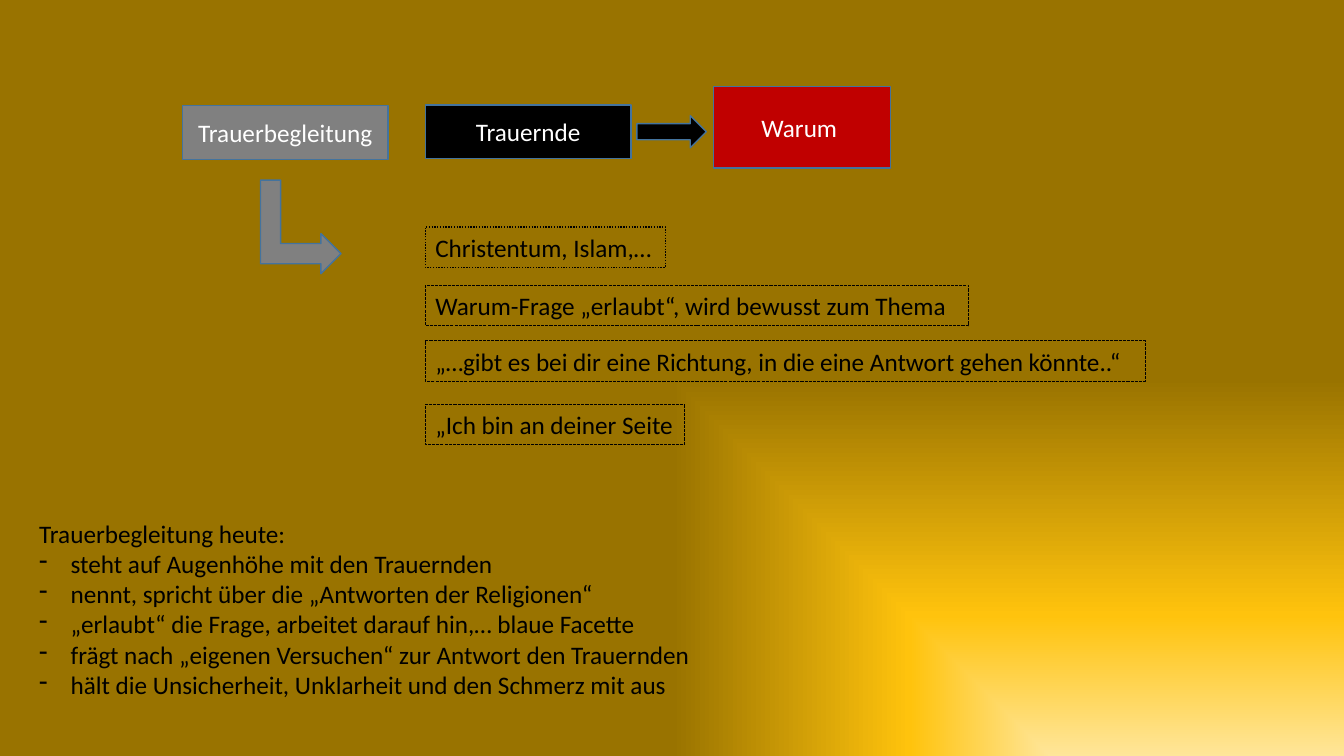
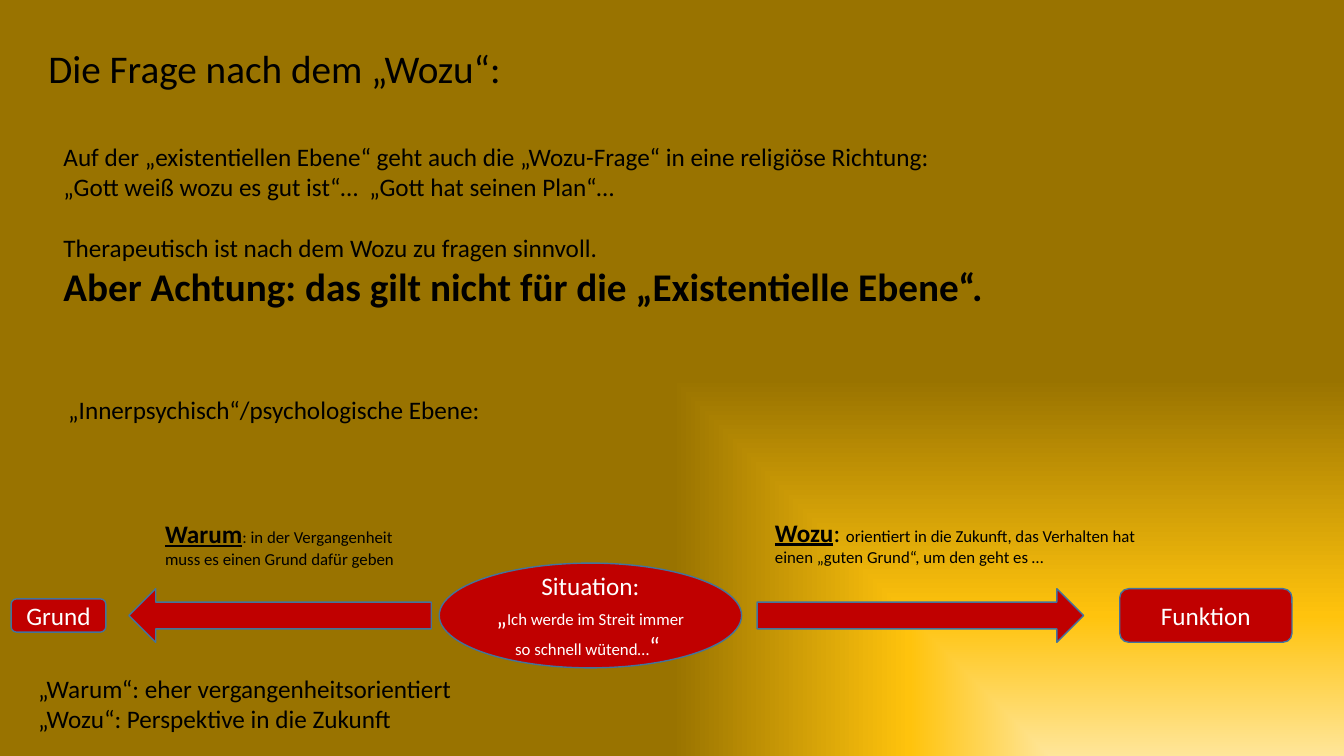
import pptx
import pptx.util
import pptx.dml.color
import pptx.enum.dml
import pptx.enum.shapes
import pptx.enum.text
import pptx.oxml
import pptx.oxml.ns

Cm, Pt = pptx.util.Cm, pptx.util.Pt
SHAPE = pptx.enum.shapes.MSO_SHAPE
DASH = pptx.enum.dml.MSO_LINE
ALIGN = pptx.enum.text.PP_ALIGN
AUTO = pptx.enum.text.MSO_AUTO_SIZE
MIDDLE = pptx.enum.text.MSO_ANCHOR.MIDDLE


class Theme:
    font = "Calibri"
    black, white, gray, red, edge = "000000", "FFFFFF", "808080", "C00000", "43739E"
    glow = [(0, "FFE699"), (37, "FFC30D"), (100, "997300")]
    runs = {
        "body": {"size": Pt(18)},
        "big": {"size": Pt(28)},
        "loud": {"size": Pt(28), "bold": True},
        "key": {"size": Pt(18), "bold": True, "underline": True},
        "small": {"size": Pt(12)},
    }
    paras = {
        "plain": {},
        "center": {"alignment": ALIGN.CENTER},
        "gap": {"space_before": Pt(22)},
        "dash": {},
    }
    indent = Cm(0.79)


# Content: a paragraph is a string or (paragraph style, [(text, run style), ...])
def dash(text):
    return ("dash", [(text, "body")])


# Shapes in a row: shape, left, middle, width, height, fill, paragraphs
STEPS = [
    (SHAPE.RECTANGLE, 4.6, 3.34, 5.18, 1.35, Theme.gray, ["Trauerbegleitung"]),
    (SHAPE.RECTANGLE, 10.72, 3.32, 5.18, 1.35, Theme.black, ["Trauernde"]),
    (SHAPE.RIGHT_ARROW, 16.05, 3.32, 1.75, 0.81, Theme.black, []),
    (SHAPE.RECTANGLE, 17.98, 3.21, 4.47, 2.06, Theme.red, ["Warum "]),
]
TURN = (SHAPE.BENT_UP_ARROW, 6.4, 5.72, 2.36, 2.03, Theme.gray, [])

# Framed quotes: top, width, line width, dash, text
QUOTES = [
    (5.72, 6.05, 1, DASH.ROUND_DOT, "Christentum, Islam,…"),
    (7.19, 13.69, 0.75, DASH.SQUARE_DOT, "Warum-Frage „erlaubt“, wird bewusst zum Thema"),
    (8.59, 18.14, 0.75, DASH.SQUARE_DOT,
     "„…gibt es bei dir eine Richtung, in die eine Antwort gehen könnte..“"),
    (10.19, 6.53, 0.75, DASH.SQUARE_DOT, "„Ich bin an deiner Seite"),
]
QUOTE_LEFT, QUOTE_TALL = 10.72, 1.02

# Free texts: left, top, width, height, paragraphs
TODAY = (0.74, 12.93, 17.42, 4.88, [
    "Trauerbegleitung heute:",
    dash("steht auf Augenhöhe mit den Trauernden"),
    dash("nennt, spricht über die „Antworten der Religionen“"),
    dash("„erlaubt“ die Frage, arbeitet darauf hin,… blaue Facette"),
    dash("frägt nach „eigenen Versuchen“ zur Antwort den Trauernden"),
    dash("hält die Unsicherheit, Unklarheit und den Schmerz mit aus"),
])
NOTES = [
    (0.97, 0.99, 12.27, 1.45, [("plain", [("Die Frage nach dem „Wozu“:", "big")])]),
    (1.35, 3.43, 23.95, 4.52, [
        "Auf der „existentiellen Ebene“ geht auch die „Wozu-Frage“ in eine religiöse Richtung:",
        "„Gott weiß wozu es gut ist“…  „Gott hat seinen Plan“…",
        ("gap", [("Therapeutisch ist nach dem Wozu zu fragen sinnvoll.", "body")]),
        ("plain", [("Aber Achtung: das gilt nicht für die „Existentielle Ebene“.", "loud")]),
    ]),
    (1.47, 9.8, 11, 1.02, ["„Innerpsychisch“/psychologische Ebene:"]),
    (3.91, 12.93, 6.4, 1.55, [
        ("plain", [("Warum", "key"), (": in der Vergangenheit", "small")]),
        ("plain", [("muss es einen Grund dafür geben", "small")]),
    ]),
    (19.28, 12.9, 9.78, 1.55, [
        ("plain", [("Wozu", "key"), (": ", "body"),
                   ("orientiert in die Zukunft, das Verhalten hat", "small")]),
        ("plain", [("einen „guten Grund“, um den geht es …", "small")]),
    ]),
    (0.71, 16.84, 11.1, 1.8, [
        "„Warum“: eher vergangenheitsorientiert",
        "„Wozu“: Perspektive in die Zukunft",
    ]),
]
AXIS = 15.51
CHAIN = [
    (SHAPE.ROUNDED_RECTANGLE, 0.28, AXIS, 2.39, 0.84, Theme.red, ["Grund"]),
    (SHAPE.LEFT_ARROW, 3.25, AXIS, 7.62, 1.35, Theme.red, []),
    (SHAPE.OVAL, 11.07, AXIS, 7.62, 2.64, Theme.red, [
        "Situation:",
        ("center", [("„", "body"), ("Ich werde im Streit immer so schnell wütend…", "small"),
                    ("“ ", "body")]),
    ]),
    (SHAPE.RIGHT_ARROW, 19.08, AXIS, 8.23, 1.35, Theme.red, []),
    (SHAPE.ROUNDED_RECTANGLE, 28.22, AXIS, 4.34, 1.35, Theme.red, ["Funktion"]),
]


# Helpers
def rgb(code):
    return pptx.dml.color.RGBColor.from_string(code)


def apply(item, form):
    for name, value in form.items():
        setattr(item, name, value)


def mark(para):
    """Give a paragraph a hanging dash bullet."""
    props = para._p.get_or_add_pPr()
    props.set("marL", str(Theme.indent))
    props.set("indent", str(-Theme.indent))
    bullet = pptx.oxml.parse_xml(
        f'<a:buChar {pptx.oxml.ns.nsdecls("a")} char="-"/>')
    props.append(bullet)


def write(frame, paras, color, style="plain"):
    for index, part in enumerate(paras):
        para = frame.add_paragraph() if index else frame.paragraphs[0]
        kind, runs = (style, [(part, "body")]) if isinstance(part, str) else part
        apply(para, Theme.paras[kind])
        if kind == "dash":
            mark(para)
        for text, form in runs:
            run = para.add_run()
            run.text = text
            apply(run.font, {"name": Theme.font, **Theme.runs[form]})
            run.font.color.rgb = rgb(color)


def stroke(shape, color, width, style=None):
    shape.line.color.rgb = rgb(color)
    apply(shape.line, {"width": Pt(width), "dash_style": style})


def block(slide, kind, left, mid, width, height, fill, paras):
    """Place a filled shape centred on the height mid."""
    shape = slide.shapes.add_shape(
        kind, Cm(left), Cm(mid - height / 2), Cm(width), Cm(height))
    shape.shadow.inherit = False
    shape.fill.solid()
    shape.fill.fore_color.rgb = rgb(fill)
    stroke(shape, Theme.edge, 1)
    apply(shape.text_frame, {"word_wrap": True, "vertical_anchor": MIDDLE})
    write(shape.text_frame, paras, Theme.white, "center")
    return shape


def label(slide, left, top, width, height, paras):
    box = slide.shapes.add_textbox(Cm(left), Cm(top), Cm(width), Cm(height))
    apply(box.text_frame, {"word_wrap": False, "auto_size": AUTO.SHAPE_TO_FIT_TEXT})
    write(box.text_frame, paras, Theme.black)
    return box


def paint(master):
    """Set the shared glow from the lower right corner."""
    master.background.fill.gradient()
    stops = "".join(
        f'<a:gs pos="{pos * 1000}"><a:srgbClr val="{color}"/></a:gs>'
        for pos, color in Theme.glow)
    glow = pptx.oxml.parse_xml(
        f'<a:gradFill {pptx.oxml.ns.nsdecls("a")} rotWithShape="1">'
        f'<a:gsLst>{stops}</a:gsLst><a:path path="rect">'
        '<a:fillToRect l="100000" t="100000"/></a:path></a:gradFill>')
    old = master.element.xpath(".//p:bgPr/a:gradFill")[0]
    old.getparent().replace(old, glow)


# Slides
def main():
    deck = pptx.Presentation()
    apply(deck, {"slide_width": Cm(33.87), "slide_height": Cm(19.05)})
    paint(deck.slide_master)
    blank = deck.slide_layouts[6]

    # Companions and mourners
    slide = deck.slides.add_slide(blank)
    for step in STEPS:
        block(slide, *step)
    block(slide, *TURN).rotation = 90
    for top, width, weight, style, text in QUOTES:
        box = label(slide, QUOTE_LEFT, top, width, QUOTE_TALL, [text])
        stroke(box, Theme.black, weight, style)
    label(slide, *TODAY)

    # Cause and purpose
    slide = deck.slides.add_slide(blank)
    for note in NOTES:
        label(slide, *note)
    for link in CHAIN:
        block(slide, *link)

    deck.save("out.pptx")


if __name__ == "__main__":
    main()
